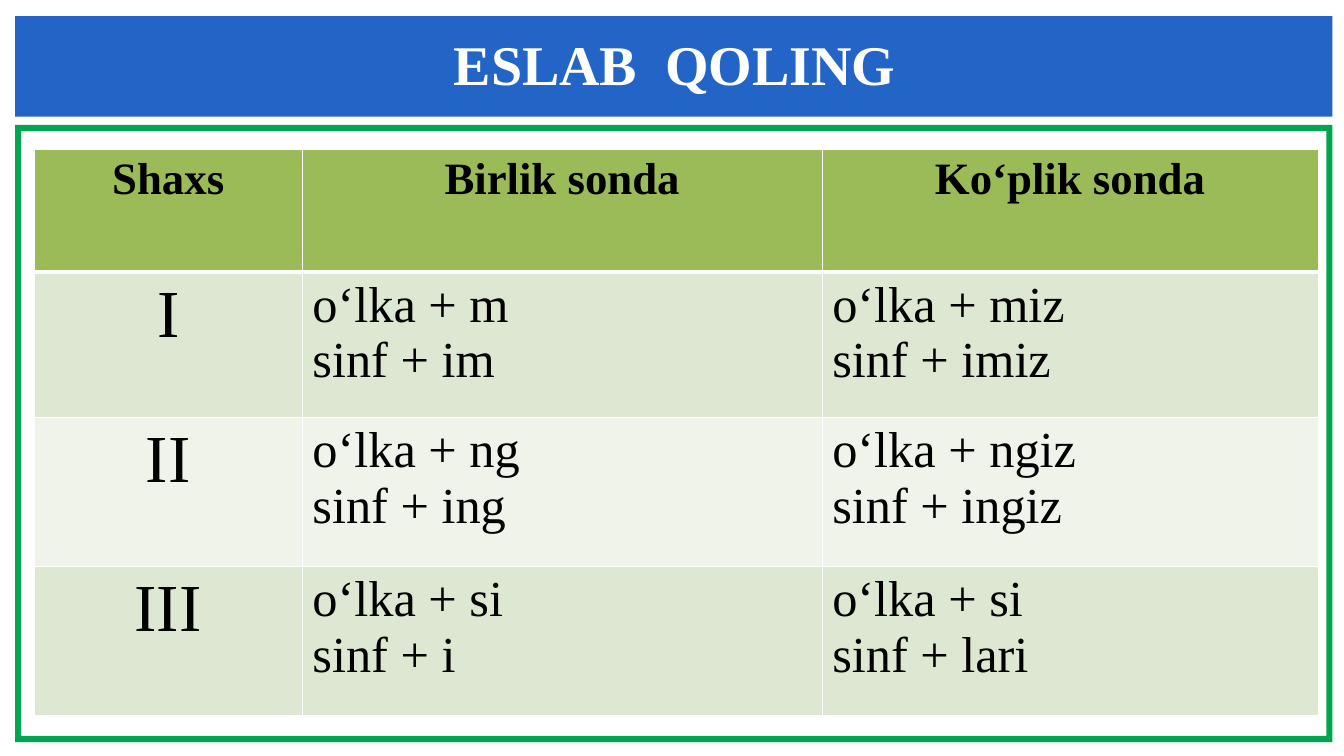
"""Build the slide on possessive endings in singular and plural."""
from lxml import etree
from pptx import Presentation
from pptx.dml.color import RGBColor
from pptx.enum.shapes import MSO_SHAPE
from pptx.enum.text import MSO_ANCHOR, PP_ALIGN
from pptx.oxml.ns import qn
from pptx.util import Cm, Pt

BOX, FRAME = MSO_SHAPE.RECTANGLE, MSO_SHAPE.FRAME
TOP, MID, LEFT = MSO_ANCHOR.TOP, PP_ALIGN.CENTER, PP_ALIGN.LEFT
FONT = "Times New Roman"
BLUE, GREEN, WHITE, BLACK = "2365C7", "00A650", "FFFFFF", "000000"
HEAD, BANDS = "9BBB59", ("EFF3EA", "DEE7D1")

TITLE = "ESLAB  QOLING"
ROWS = [
    ("Shaxs", "Birlik sonda", "Ko‘plik sonda"),
    ("I", "o‘lka + m\nsinf + im", "o‘lka + miz\nsinf + imiz"),
    ("II", "o‘lka + ng\nsinf + ing", "o‘lka + ngiz\nsinf + ingiz"),
    ("III", "o‘lka + si\nsinf + i", "o‘lka + si\nsinf + lari"),
]
WIDTHS = (6.76, 13.1, 12.5)
HEIGHTS = (3.1, 3.66, 3.76, 3.76)


def color(code):
    return RGBColor.from_string(code)


def paint(item, code):
    item.fill.solid()
    item.fill.fore_color.rgb = color(code)


def style(frame, size, code, bold, align):
    for par in frame.paragraphs:
        par.alignment = align
        for run in par.runs:
            font = run.font
            font.name, font.size, font.bold = FONT, Pt(size), bold
            font.color.rgb = color(code)


def block(shapes, kind, place, code):
    shape = shapes.add_shape(kind, *map(Cm, place))
    shape.shadow.inherit = False
    shape.line.fill.background()
    paint(shape, code)
    return shape


def border(cell, widths):
    props = cell._tc.get_or_add_tcPr()
    for spot, (side, width) in enumerate(zip("LRTB", widths)):
        line = etree.Element(qn(f"a:ln{side}"), w=str(Pt(width)))
        fill = etree.SubElement(line, qn("a:solidFill"))
        etree.SubElement(fill, qn("a:srgbClr"), val=WHITE)
        props.insert(spot, line)


def add_grid(shapes):
    place = map(Cm, (0.86, 3.76, sum(WIDTHS), sum(HEIGHTS)))
    table = shapes.add_table(len(ROWS), len(WIDTHS), *place).table
    for col, width in zip(table.columns, WIDTHS):
        col.width = Cm(width)
    for r, (texts, height) in enumerate(zip(ROWS, HEIGHTS)):
        table.rows[r].height = Cm(height)
        for c, text in enumerate(texts):
            cell = table.cell(r, c)
            cell.text = text
            head = r == 0
            size = 32 if head else 48 if c == 0 else 36
            align = MID if head or c == 0 else LEFT
            style(cell.text_frame, size, BLACK, head, align)
            paint(cell, HEAD if head else BANDS[r % 2])
            border(cell, (1, 1, 3 if r == 1 else 1, 3 if head else 1))


def main():
    deck = Presentation()
    deck.slide_width, deck.slide_height = Cm(33.87), Cm(19.05)
    shapes = deck.slides.add_slide(deck.slide_layouts[5]).shapes

    frame = block(shapes, FRAME, (0.38, 3.15, 33.2, 15.55), GREEN)
    frame.adjustments[0] = 0.01
    bar = block(shapes, BOX, (0.38, 0.41, 33.2, 2.53), BLUE)

    title = shapes.title
    for part in (frame, bar):
        title.element.addprevious(part.element)
    title.left, title.top = Cm(4.3), Cm(0.75)
    title.width, title.height = Cm(25.4), Cm(1.8)
    text = title.text_frame
    text.text = TITLE
    text.vertical_anchor = TOP
    text.margin_left = text.margin_right = 0
    text.margin_top = text.margin_bottom = 0
    style(text, 40, WHITE, True, MID)

    add_grid(shapes)
    deck.save("out.pptx")


if __name__ == "__main__":
    main()
